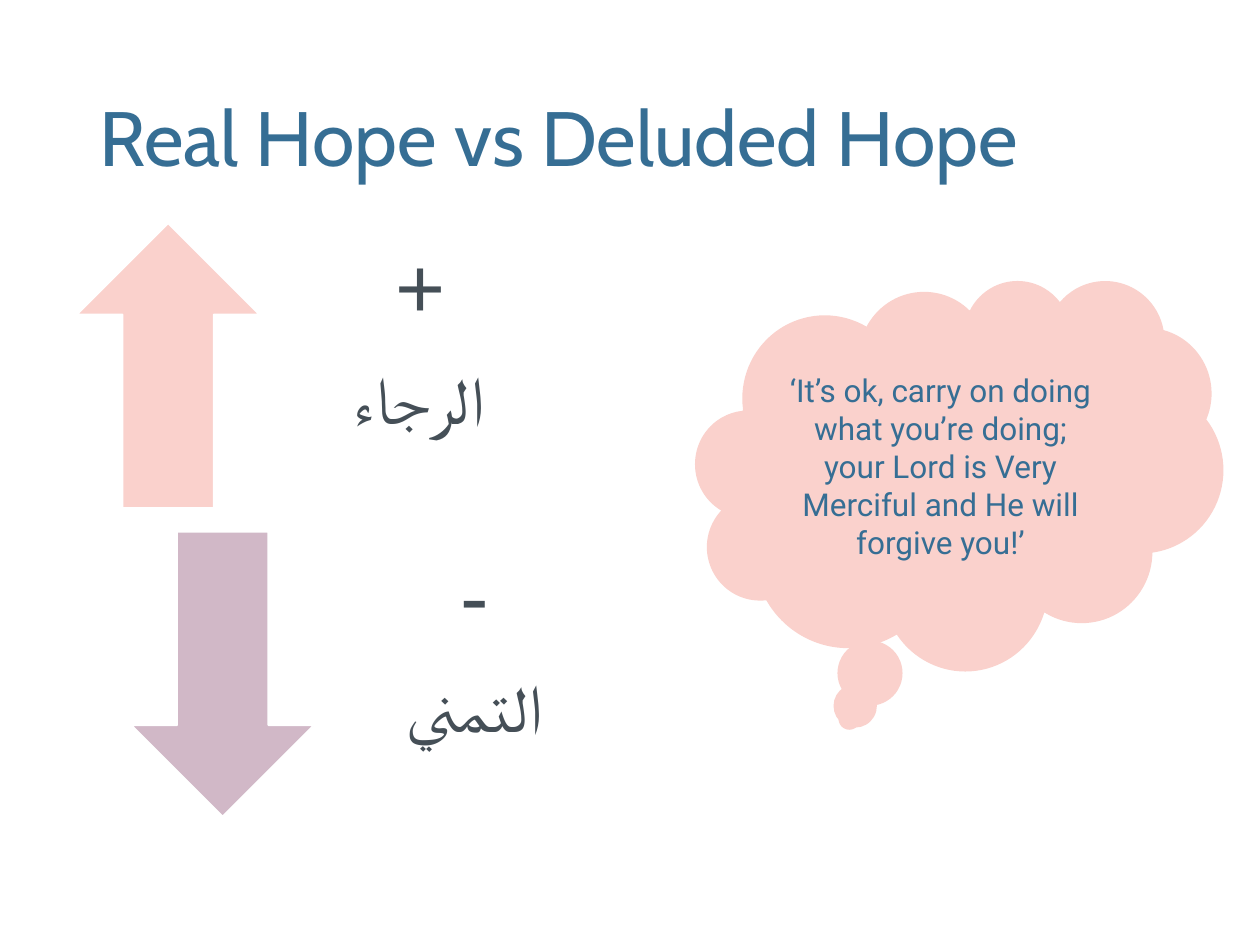
from dataclasses import dataclass

from pptx import Presentation
from pptx import util as u
from pptx.dml.color import RGBColor
from pptx.enum import shapes, text


@dataclass(frozen=True)
class Theme:
    heading: RGBColor = RGBColor(0x36, 0x6E, 0x94)
    body: RGBColor = RGBColor(0x45, 0x4F, 0x57)
    rose: RGBColor = RGBColor(0xFA, 0xD1, 0xCC)
    mauve: RGBColor = RGBColor(0xD1, 0xB8, 0xC7)
    outline: RGBColor = RGBColor(0xFF, 0xFF, 0xFF)
    title_size: int = 44
    sign_size: int = 49
    term_size: int = 38
    thought_size: int = 18


@dataclass(frozen=True)
class Box:
    left: float
    top: float
    width: float
    height: float

    def lengths(self) -> list[u.Length]:
        return [u.Cm(side) for side in (self.left, self.top, self.width, self.height)]


@dataclass(frozen=True)
class Line:
    wording: str
    face: str
    size: int
    color: RGBColor
    align: text.PP_ALIGN = text.PP_ALIGN.CENTER
    spacing: float = 1.0
    after: float = 0


@dataclass(frozen=True)
class Hope:
    arrow: shapes.MSO_SHAPE
    fill: RGBColor
    sign: str
    term: str


THEME = Theme()
HOPES = [
    Hope(shapes.MSO_SHAPE.UP_ARROW, THEME.rose, "+", "الرجاء"),
    Hope(shapes.MSO_SHAPE.DOWN_ARROW, THEME.mauve, "-", "التمني"),
]
FIRST_ARROW = Box(1.55, 4.5, 3.68, 5.74)
STEP_RIGHT, STEP_DOWN = 1.1, 6.22
LABEL_OFFSET, LABEL_WIDTH, LABEL_INSET = 3.8, 6.25, 0.97


def write(frame, lines: list[Line]) -> None:
    frame.word_wrap = True
    frame.vertical_anchor = text.MSO_ANCHOR.MIDDLE
    for index, line in enumerate(lines):
        paragraph = frame.add_paragraph() if index else frame.paragraphs[0]
        paragraph.text = line.wording
        paragraph.alignment = line.align
        paragraph.line_spacing = line.spacing
        paragraph.space_after = u.Pt(line.after)
        paragraph.font.name = line.face
        paragraph.font.size = u.Pt(line.size)
        paragraph.font.color.rgb = line.color


def add_filled(slide, preset: shapes.MSO_SHAPE, box: Box, fill: RGBColor):
    figure = slide.shapes.add_shape(preset, *box.lengths())
    figure.shadow.inherit = False
    figure.fill.solid()
    figure.fill.fore_color.rgb = fill
    figure.line.fill.background()
    return figure


def add_hope(slide, hope: Hope, row: int) -> None:
    left = FIRST_ARROW.left + row * STEP_RIGHT
    top = FIRST_ARROW.top + row * STEP_DOWN
    arrow = add_filled(slide, hope.arrow,
                       Box(left, top, FIRST_ARROW.width, FIRST_ARROW.height), hope.fill)
    arrow.line.color.rgb = THEME.outline
    arrow.line.width = u.Pt(1)

    label_box = Box(left + LABEL_OFFSET, top, LABEL_WIDTH, FIRST_ARROW.height)
    label = slide.shapes.add_textbox(*label_box.lengths()).text_frame
    label.margin_left = label.margin_right = label.margin_bottom = u.Cm(LABEL_INSET)
    label.margin_top = 0
    write(label, [
        Line(hope.sign, "Arial", THEME.sign_size, THEME.body, spacing=0.9, after=17),
        Line(hope.term, "Arial", THEME.term_size, THEME.body, spacing=0.9, after=5.7),
    ])


def main() -> None:
    deck = Presentation()
    deck.slide_width, deck.slide_height = u.Cm(25.4), u.Cm(19.05)
    slide = deck.slides.add_slide(deck.slide_layouts[6])

    title = slide.shapes.add_textbox(*Box(1.75, 1.02, 21.89, 3.68).lengths())
    write(title.text_frame, [
        Line("Real Hope vs Deluded Hope", "Cabin", THEME.title_size, THEME.heading,
             align=text.PP_ALIGN.LEFT, spacing=0.9),
    ])

    for row, hope in enumerate(HOPES):
        add_hope(slide, hope, row)

    thought = add_filled(slide, shapes.MSO_SHAPE.CLOUD_CALLOUT,
                         Box(14.02, 5.64, 10.64, 7.87), THEME.rose)
    write(thought.text_frame, [
        Line("‘It’s ok, carry on doing what you’re doing; your Lord is Very "
             "Merciful and He will forgive you!’",
             "Roboto", THEME.thought_size, THEME.heading),
    ])

    deck.save("out.pptx")


if __name__ == "__main__":
    main()
